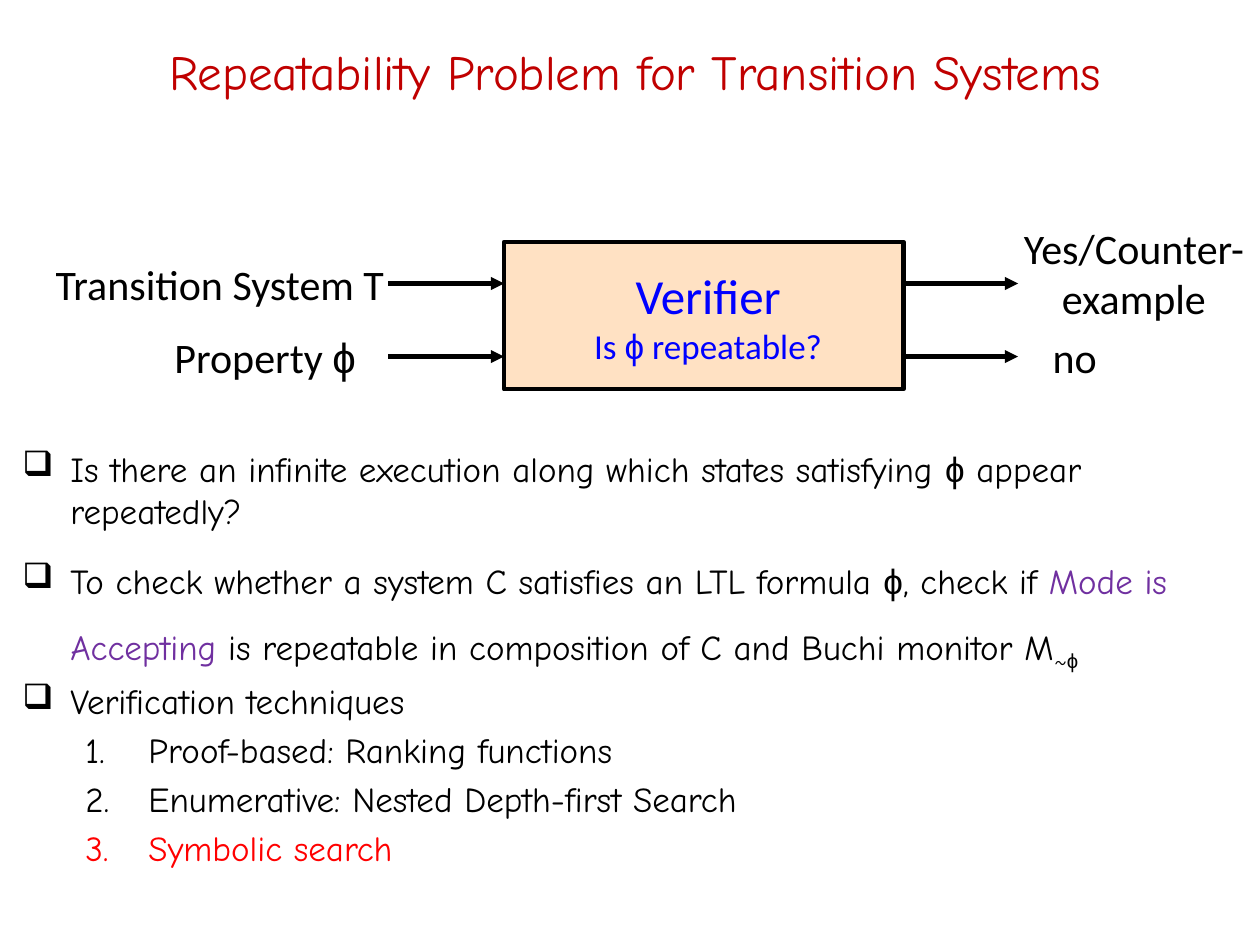
from itertools import groupby

from lxml.etree import SubElement
from pptx import Presentation
from pptx.dml.color import RGBColor
from pptx.enum.shapes import MSO_CONNECTOR, MSO_SHAPE
from pptx.enum.text import MSO_ANCHOR, PP_ALIGN
from pptx.oxml.ns import qn
from pptx.util import Inches, Pt

BLACK = RGBColor(0x00, 0x00, 0x00)
BLUE = RGBColor(0x00, 0x00, 0xFF)
RED = RGBColor(0xFF, 0x00, 0x00)
DARK_RED = RGBColor(0xC0, 0x00, 0x00)
PURPLE = RGBColor(0x70, 0x30, 0xA0)
PEACH = RGBColor(0xFF, 0xCC, 0x99)


class SlideBuilder:
    heading_font = "Comic Neue"
    label_font = "Calibri"
    symbol_font = "Arial"
    line_width = Pt(2.5)

    def __init__(self, slide):
        self.s = slide

    def text_frame(self, x, y, w, h, wrap=True, anchor=MSO_ANCHOR.MIDDLE):
        box = self.s.shapes.add_textbox(Inches(x), Inches(y), Inches(w), Inches(h))
        tf = box.text_frame
        tf.word_wrap = wrap
        tf.vertical_anchor = anchor
        return tf

    def add_runs(self, p, text, size, font, color, subscript=False):
        for is_symbol, chars in groupby(text, lambda c: c == "ϕ"):
            r = p.add_run()
            r.text = "".join(chars)
            r.font.size = Pt(size)
            r.font.name = self.symbol_font if is_symbol else font
            r.font.color.rgb = color
            if subscript:
                r._r.get_or_add_rPr().set("baseline", "-25000")

    def label(self, lines, x, y, w, h, color=BLACK, font=label_font, wrap=True):
        tf = self.text_frame(x, y, w, h, wrap)
        for i, (text, size) in enumerate(lines):
            p = tf.add_paragraph() if i else tf.paragraphs[0]
            p.alignment = PP_ALIGN.CENTER
            self.add_runs(p, text, size, font, color)

    def box(self, x, y, w, h, color, opacity):
        sp = self.s.shapes.add_shape(
            MSO_SHAPE.RECTANGLE, Inches(x), Inches(y), Inches(w), Inches(h))
        sp.shadow.inherit = False
        sp.fill.solid()
        sp.fill.fore_color.rgb = color
        clr = sp._element.spPr.find(qn("a:solidFill")).find(qn("a:srgbClr"))
        SubElement(clr, qn("a:alpha")).set("val", str(opacity * 1000))
        sp.line.color.rgb = BLACK
        sp.line.width = self.line_width

    def arrow(self, x1, x2, y):
        cx = self.s.shapes.add_connector(
            MSO_CONNECTOR.STRAIGHT, Inches(x1), Inches(y), Inches(x2), Inches(y))
        cx.line.color.rgb = BLACK
        cx.line.width = self.line_width
        spPr = cx._element.spPr
        SubElement(spPr.find(qn("a:ln")), qn("a:tailEnd")).set("type", "triangle")
        SubElement(spPr, qn("a:effectLst"))

    def bullets(self, items, x, y, w, h, size=20):
        tf = self.text_frame(x, y, w, h, anchor=MSO_ANCHOR.TOP)
        for i, (level, spacing, pieces) in enumerate(items):
            p = tf.add_paragraph() if i else tf.paragraphs[0]
            p.level = level
            p.space_before = Pt(size * 0.2)
            p.line_spacing = spacing
            left, hang = (1, 0.5) if level else (0.38, 0.38)
            pPr = p._p.get_or_add_pPr()
            pPr.set("marL", str(Inches(left)))
            pPr.set("indent", str(-Inches(hang)))
            if level:
                SubElement(pPr, qn("a:buAutoNum")).set("type", "arabicPeriod")
            else:
                SubElement(pPr, qn("a:buChar")).set("char", "❑")
            for text, color, *subscript in pieces:
                self.add_runs(p, text, size, self.heading_font, color, bool(subscript))


def main():
    prs = Presentation()
    prs.slide_width, prs.slide_height = Inches(10), Inches(7.5)
    slide = SlideBuilder(prs.slides.add_slide(prs.slide_layouts[6]))

    slide.label([("Repeatability Problem for Transition Systems", 28)],
                0.75, 0.17, 8.58, 0.78, DARK_RED, slide.heading_font)

    slide.box(4, 1.92, 3.17, 1.17, PEACH, 58)
    for x1, x2 in ((3.08, 4), (7.17, 8.08)):
        for y in (2.25, 2.83):
            slide.arrow(x1, x2, y)

    for text, x, y, w, h, wrap in (
        ("Transition System T", 0.33, 2, 2.83, 0.5, False),
        ("Property ϕ", 1.27, 2.58, 1.67, 0.5, False),
        ("Yes/Counter-example", 8, 1.71, 2, 0.91, True),
        ("no", 8.25, 2.58, 0.56, 0.5, False),
    ):
        slide.label([(text, 24)], x, y, w, h, wrap=wrap)
    slide.label([("Verifier", 28), ("Is ϕ repeatable?", 20)],
                3.83, 1.92, 3.58, 1.17, BLUE)

    slide.bullets([
        (0, 1.0, [("Is there an infinite execution along which states "
                   "satisfying ϕ appear repeatedly?", BLACK)]),
        (0, 1.5, [("To check whether a system C satisfies an LTL formula ϕ, check if ", BLACK),
                  ("Mode is Accepting ", PURPLE),
                  ("is repeatable in composition of C and Buchi monitor M", BLACK),
                  ("~ϕ", BLACK, True)]),
        (0, 1.0, [("Verification techniques", BLACK)]),
        (1, 1.0, [("Proof-based: Ranking functions", BLACK)]),
        (1, 1.0, [("Enumerative: Nested Depth-first Search", BLACK)]),
        (1, 1.0, [("Symbolic search", RED)]),
    ], 0.08, 3.5, 9.92, 3.75)

    prs.save("out.pptx")


if __name__ == "__main__":
    main()
